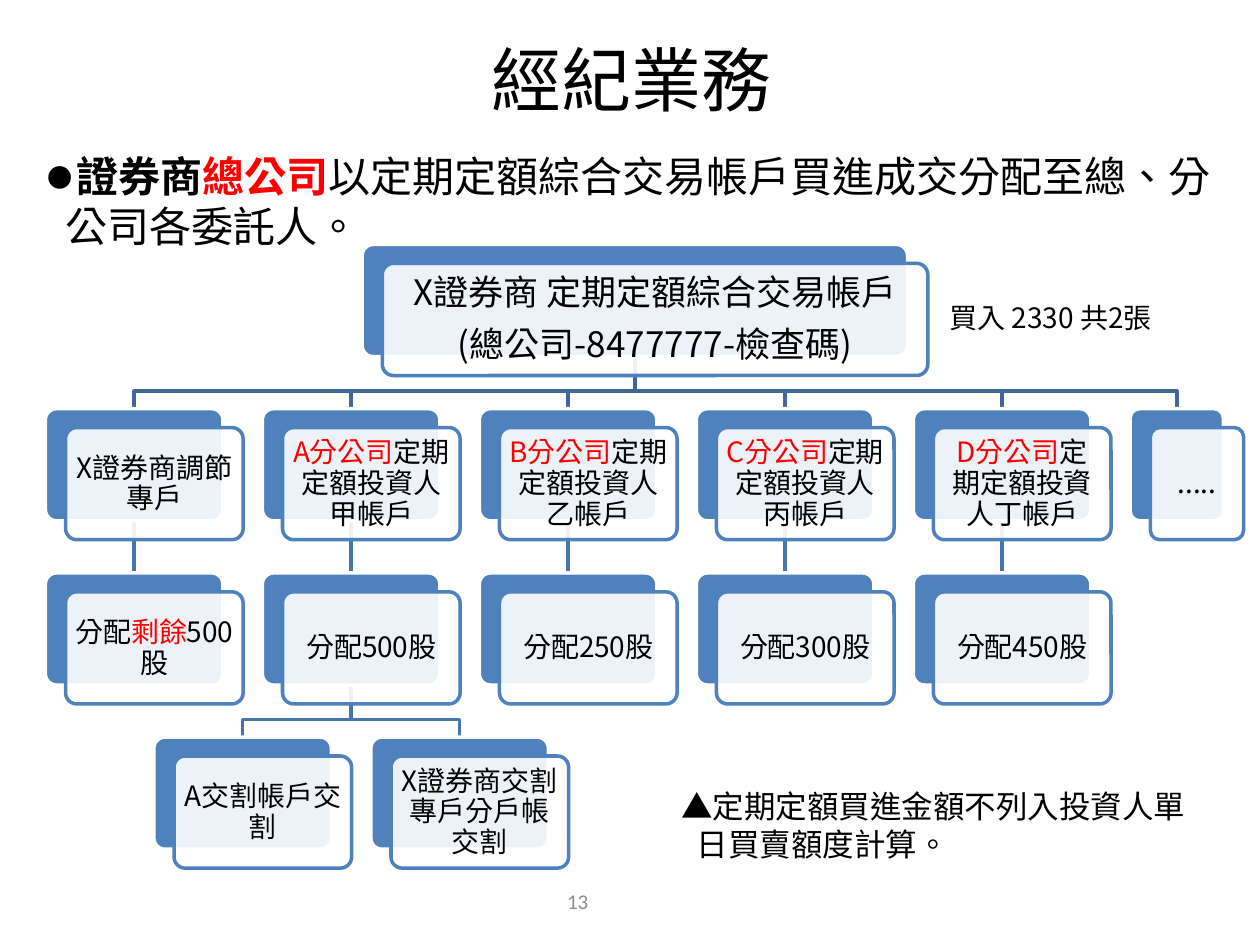
from lxml import etree
from pptx import Presentation
from pptx import util as u
from pptx.dml.color import RGBColor
from pptx.enum import shapes, text
from pptx.oxml.ns import qn

COLORS = {"black": "000000", "red": "FF0000", "white": "FFFFFF", "blue": "4F81BD",
          "branch": "3F6797", "leaf": "4875AC", "gray": "8C8C8C"}
CJK = "Noto Sans CJK SC"

# Chart grid, in inches
LEFT, TOP = 0.36, 1.94
COLUMN = (8.97 - LEFT) / 5  # six columns
ROW = (5.85 - TOP) / 3  # four rows
CARD_WIDTH, CARD_HEIGHT = 1.41, 0.89
SHIFT_X, SHIFT_Y = 0.16, 0.15

BRANCHES = [
    ([("X證券商調節專戶", "black")],
     [("分配", "black"), ("剩餘", "red"), ("500股", "black")]),
    ([("A分公司", "red"), ("定期定額投資人甲帳戶", "black")], [("分配500股", "black")]),
    ([("B分公司", "red"), ("定期定額投資人乙帳戶", "black")], [("分配250股", "black")]),
    ([("C分公司", "red"), ("定期定額投資人丙帳戶", "black")], [("分配300股", "black")]),
    ([("D分公司", "red"), ("定期定額投資人丁帳戶", "black")], [("分配450股", "black")]),
    ([(".....", "black")], None),
]
SETTLEMENTS = ["A交割帳戶交割", "X證券商交割專戶分戶帳交割"]


def color(name):
    return RGBColor.from_string(COLORS[name])


def add_run(paragraph, words, size, color_name="black", bold=False, font=CJK):
    run = paragraph.add_run()
    run.text = words
    run.font.size = u.Pt(size)
    run.font.bold = bold
    run.font.name = font
    run.font.color.rgb = color(color_name)
    properties = run._r.get_or_add_rPr()
    properties.set("lang", "zh-TW")
    etree.SubElement(properties, qn("a:ea")).set("typeface", font)


def write(frame, paragraphs, size, leading, align=text.PP_ALIGN.LEFT, gap=0, font=CJK):
    """Fill a frame; each paragraph is a list of (words, color[, bold])."""
    frame.word_wrap = True
    frame.auto_size = text.MSO_AUTO_SIZE.NONE
    for index, runs in enumerate(paragraphs):
        paragraph = frame.add_paragraph() if index else frame.paragraphs[0]
        paragraph.alignment = align
        paragraph.line_spacing = u.Pt(leading)
        paragraph.space_before = u.Pt(gap if index else 0)
        paragraph.space_after = u.Pt(0)
        for words, color_name, *bold in runs:
            add_run(paragraph, words, size, color_name, bool(bold), font)


def set_indent(paragraph, margin, hanging=0, bullet=None):
    properties = paragraph._p.get_or_add_pPr()
    properties.set("marL", str(u.Inches(margin)))
    properties.set("indent", str(-u.Inches(hanging)))
    if bullet:
        etree.SubElement(properties, qn("a:buSzPct")).set("val", "60000")
        etree.SubElement(properties, qn("a:buFont")).set("typeface", CJK)
        etree.SubElement(properties, qn("a:buChar")).set("char", bullet)
    else:
        etree.SubElement(properties, qn("a:buNone"))


def place(shape, left, top, width, height):
    shape.left, shape.top = u.Inches(left), u.Inches(top)
    shape.width, shape.height = u.Inches(width), u.Inches(height)


def add_text(slide, box, paragraphs, size, leading, **options):
    shape = slide.shapes.add_textbox(*map(u.Inches, box))
    write(shape.text_frame, paragraphs, size, leading, **options)
    return shape


def add_panel(slide, left, top, width, fill, line):
    panel = slide.shapes.add_shape(
        shapes.MSO_SHAPE.ROUNDED_RECTANGLE,
        *map(u.Inches, (left, top, width, CARD_HEIGHT)))
    panel.adjustments[0] = 0.1
    panel.shadow.inherit = False
    panel.fill.solid()
    panel.fill.fore_color.rgb = color(fill)
    panel.line.color.rgb = color(line)
    panel.line.width = u.Pt(2)
    return panel


def add_card(slide, column, row, paragraphs, width=CARD_WIDTH, size=16, leading=17.6):
    """A blue panel with a translucent text panel shifted over it; returns the blue one."""
    left, top = LEFT + column * COLUMN, TOP + row * ROW
    back = add_panel(slide, left, top, width, "blue", "white")
    front = add_panel(slide, left + SHIFT_X, top + SHIFT_Y, width, "white", "blue")
    solid = front.fill._xPr.find(qn("a:solidFill"))
    etree.SubElement(solid[0], qn("a:alpha")).set("val", "90000")
    frame = front.text_frame
    frame.margin_left = frame.margin_right = u.Inches(0.05)
    frame.vertical_anchor = text.MSO_ANCHOR.MIDDLE
    write(frame, paragraphs, size, leading, text.PP_ALIGN.CENTER, gap=7.5)
    return back


def finish_line(slide, shape, color_name):
    shape.line.color.rgb = color(color_name)
    shape.line.width = u.Pt(2)
    slide.shapes._spTree.insert(2, shape._element)  # behind the cards


def join_straight(slide, parent, child):
    connector = slide.shapes.add_connector(shapes.MSO_CONNECTOR.STRAIGHT, 0, 0, 0, 0)
    connector.begin_connect(parent, 2)
    connector.end_connect(child, 0)
    etree.SubElement(connector._element.spPr, qn("a:effectLst"))
    finish_line(slide, connector, "leaf")


def join_bent(slide, parent, child, color_name):
    start_x, end_x = (card.left + card.width // 2 for card in (parent, child))
    start_y, end_y = parent.top + parent.height, child.top
    bend_y = start_y + (end_y - start_y) * 2 // 3
    builder = slide.shapes.build_freeform(start_x, start_y)
    builder.add_line_segments([(start_x, bend_y), (end_x, bend_y), (end_x, end_y)], close=False)
    path = builder.convert_to_shape()
    path.fill.background()
    path.shadow.inherit = False
    finish_line(slide, path, color_name)


def add_account_chart(slide):
    # Head office account
    root = add_card(slide, 1.46, 0, [[("X證券商 定期定額綜合交易帳戶", "black")],
                                     [("(總公司-8477777-檢查碼)", "black")]],
                    width=4.33, size=20, leading=22)
    # Branch accounts and their allocations
    allocations = []
    for column, (account, allocation) in enumerate(BRANCHES):
        width = CARD_WIDTH if allocation else 0.74
        branch = add_card(slide, column, 1, [account], width)
        join_bent(slide, root, branch, "branch")
        if allocation:
            allocations.append(add_card(slide, column, 2, [allocation]))
            join_straight(slide, branch, allocations[-1])
    # Settlement accounts under branch A
    for index, words in enumerate(SETTLEMENTS):
        settlement = add_card(slide, index + 0.5, 3, [[(words, "black")]])
        join_bent(slide, allocations[1], settlement, "leaf")


def add_heading(slide):
    title, body = slide.placeholders
    place(title, 0.51, 0, 9, 1.25)
    title.text_frame.vertical_anchor = text.MSO_ANCHOR.MIDDLE
    write(title.text_frame, [[("經紀業務", "black")]], 40, 48, text.PP_ALIGN.CENTER)

    place(body, 0.28, 1.15, 9.45, 0.91)
    frame = body.text_frame
    frame.margin_right = u.Inches(0)
    write(frame, [[("證券商", "black", True), ("總公司", "red", True),
                   ("以定期定額綜合交易帳戶買進成交分配至總、分", "black")],
                  [("公司各委託人。", "black")]], 24, 28.6)
    set_indent(frame.paragraphs[0], 0.23, 0.23, "●")
    set_indent(frame.paragraphs[1], 0.14)


def add_notes_and_number(slide):
    add_text(slide, (7.44, 2.33, 2.18, 0.42), [[("買入 2330 共2張", "black")]], 16, 19.5)
    remark = add_text(slide, (5.31, 6.19, 4.33, 0.71),
                      [[("▲定期定額買進金額不列入投資人單", "black")],
                       [("日買賣額度計算。", "black")]], 18, 22)
    set_indent(remark.text_frame.paragraphs[1], 0.12)
    number = add_text(slide, (3.42, 6.95, 2.33, 0.4), [[("13", "gray")]], 12, 14.6,
                      align=text.PP_ALIGN.CENTER, font="Calibri")
    number.text_frame.vertical_anchor = text.MSO_ANCHOR.MIDDLE


def main():
    presentation = Presentation()
    presentation.slide_width, presentation.slide_height = u.Inches(10), u.Inches(7.5)
    slide = presentation.slides.add_slide(presentation.slide_layouts[1])
    add_heading(slide)
    add_account_chart(slide)
    add_notes_and_number(slide)
    presentation.save("out.pptx")


if __name__ == "__main__":
    main()
